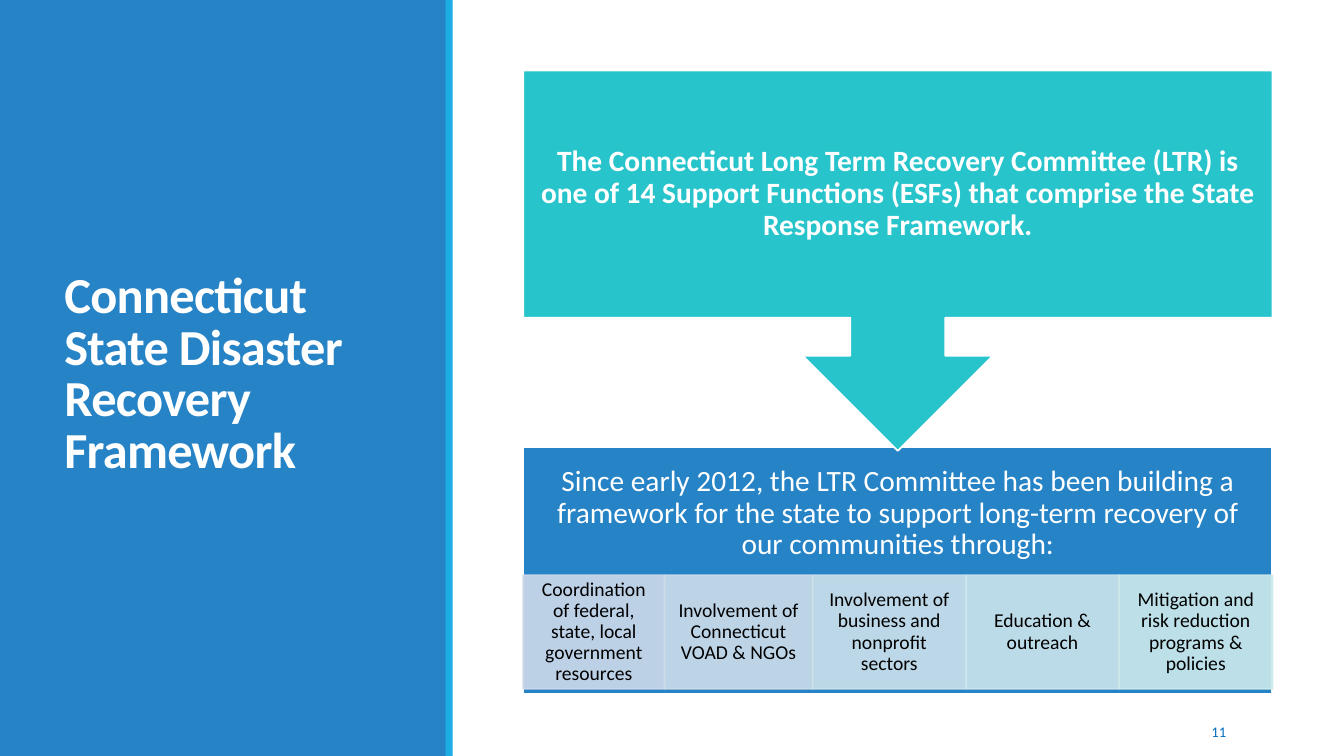
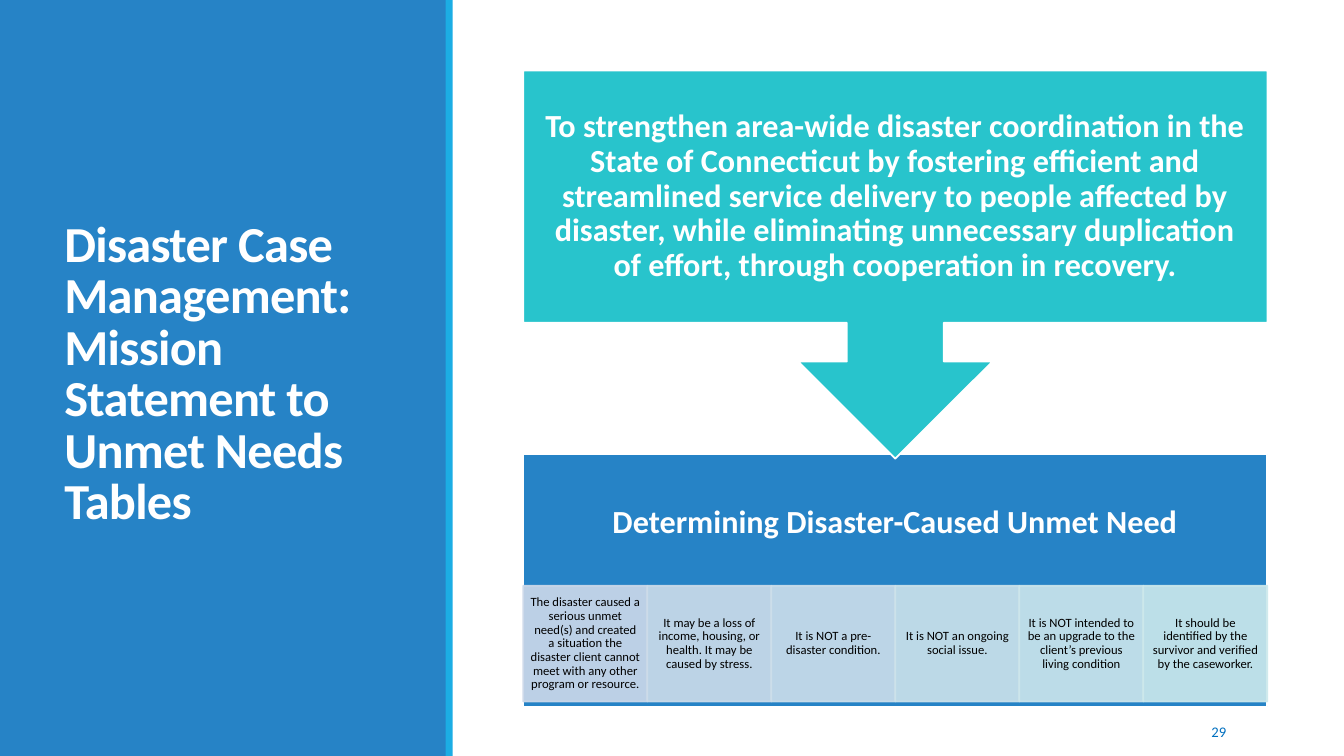
"""Build two recovery slides, each a callout that leads down to a panel of cells."""
from dataclasses import dataclass
from itertools import accumulate

from lxml import etree
from pptx import Presentation
from pptx import util as u
from pptx.dml.color import RGBColor
from pptx.enum import shapes, text
from pptx.oxml.ns import qn

FONT = "Calibri"
WHITE, BLACK = "FFFFFF", "000000"
BLUE, SKY, TEAL, NUMBER_BLUE = "2683C6", "1CADE4", "28C4CC", "0070C0"
CELL_FIRST, CELL_LAST = "CDD9EA", "CDE9EC"
CELL_OPACITY = 90
FLOW_LEFT, FLOW_TOP = 5.19, 0.7
CALLOUT_RATIO, HEADER_RATIO, CELL_TOP_RATIO, CELL_RATIO = 1.54, 0.54, 0.52, 0.46
OVERLAP = 0.04
LINE_SPACING = 0.9


@dataclass(frozen=True)
class Style:
    size: float
    colour: str = WHITE
    bold: bool = False
    align: text.PP_ALIGN = text.PP_ALIGN.CENTER
    spacing: float = LINE_SPACING
    tracking: float = 0


@dataclass(frozen=True)
class Flow:
    title: str
    number: int
    callout: str
    header: str
    header_bold: bool
    panel_height: float
    heading_size: float
    heading_inset: float
    cell_size: float
    cell_insets: tuple[float, float]
    cell_widths: tuple[float, ...]
    cells: tuple[str, ...]


FLOWS = (
    Flow(
        title="Connecticut State Disaster Recovery Framework",
        number=11,
        callout="The Connecticut Long Term Recovery Committee (LTR) is one of 14 Support "
                "Functions (ESFs) that comprise the State Response Framework.",
        header="Since early 2012, the LTR Committee has been building a framework for the "
               "state to support long-term recovery of our communities through:",
        header_bold=False,
        panel_height=2.45,
        heading_size=21,
        heading_inset=0.16,
        cell_size=14,
        cell_insets=(0.11, 0.02),
        cell_widths=(1.4, 1.47, 1.52, 1.52, 1.52),
        cells=(
            "Coordination of federal, state, local government resources",
            "Involvement of Connecticut VOAD & NGOs",
            "Involvement of business and nonprofit sectors",
            "Education & outreach",
            "Mitigation and risk reduction programs & policies",
        ),
    ),
    Flow(
        title="Disaster Case Management: Mission Statement to Unmet Needs Tables",
        number=29,
        callout="To strengthen area-wide disaster coordination in the State of Connecticut by "
                "fostering efficient and streamlined service delivery to people affected by "
                "disaster, while eliminating unnecessary duplication of effort, through "
                "cooperation in recovery.",
        header="Determining Disaster-Caused Unmet Need",
        header_bold=True,
        panel_height=2.5,
        heading_size=23,
        heading_inset=0.18,
        cell_size=9,
        cell_insets=(0.07, 0.01),
        cell_widths=(1.23,) * 6,
        cells=(
            "The disaster caused a serious unmet need(s) and created a situation the disaster "
            "client cannot meet with any other program or resource.",
            "It may be a loss of income, housing, or health. It may be caused by stress.",
            "It is NOT a pre-disaster condition.",
            "It is NOT an ongoing social issue.",
            "It is NOT intended to be an upgrade to the client’s previous living condition",
            "It should be identified by the survivor and verified by the caseworker.",
        ),
    ),
)


def rgb(colour: str) -> RGBColor:
    """Turn a hex string into a colour."""
    return RGBColor.from_string(colour)


def blend(first: str, last: str, share: float) -> str:
    """Return the colour that lies at a share of the way between two colours."""
    pairs = zip(rgb(first), rgb(last))
    return "".join(f"{round(a + (b - a) * share):02X}" for a, b in pairs)


def add_block(page, kind, left, top, width, height, fill, line=None):
    """Draw a filled shape, outlined if a line colour is given."""
    block = page.shapes.add_shape(kind, *map(u.Inches, (left, top, width, height)))
    block.shadow.inherit = False
    block.fill.solid()
    block.fill.fore_color.rgb = rgb(fill)
    if line:
        block.line.color.rgb = rgb(line)
        block.line.width = u.Pt(1.25)
    else:
        block.line.fill.background()
    return block


def set_opacity(block, percent: int) -> None:
    """Make the fill and line of a shape partly transparent."""
    for colour in list(block._element.spPr.iter(qn("a:srgbClr"))):
        etree.SubElement(colour, qn("a:alpha")).set("val", str(percent * 1000))


def write(box, words: str, style: Style, insets=(0.1, 0.05, 0.1, 0.05)) -> None:
    """Write one vertically centred paragraph, with insets left, top, right, bottom."""
    frame = box.text_frame
    frame.word_wrap = True
    frame.vertical_anchor = text.MSO_ANCHOR.MIDDLE
    (frame.margin_left, frame.margin_top,
     frame.margin_right, frame.margin_bottom) = map(u.Inches, insets)
    para = frame.paragraphs[0]
    para.alignment = style.align
    para.line_spacing = style.spacing
    para.font.name = FONT
    para.font.size = u.Pt(style.size)
    para.font.bold = style.bold
    para.font.color.rgb = rgb(style.colour)
    span = para.add_run()
    span.text = words
    if style.tracking:
        span._r.get_or_add_rPr().set("spc", str(round(style.tracking * 100)))


def add_text(page, left, top, width, height, words: str, style: Style) -> None:
    """Add a text box."""
    box = page.shapes.add_textbox(*map(u.Inches, (left, top, width, height)))
    write(box, words, style)


def add_frame(page, flow: Flow) -> None:
    """Draw the side band, title and page number."""
    rectangle = shapes.MSO_SHAPE.RECTANGLE
    add_block(page, rectangle, 0, 0, 4.43, 7.5, BLUE)
    add_block(page, rectangle, 4.42, 0, 0.07, 7.5, SKY)
    add_text(page, 0.54, 0.57, 3.37, 6.31, flow.title,
             Style(36, bold=True, align=text.PP_ALIGN.LEFT, spacing=0.85, tracking=-0.5))
    add_text(page, 10.83, 7.06, 1.43, 0.4, str(flow.number),
             Style(10.5, NUMBER_BLUE, align=text.PP_ALIGN.RIGHT, spacing=1.0))


def add_cells(page, flow: Flow, top: float) -> None:
    """Draw the row of tinted cells."""
    side, edge = flow.cell_insets
    lefts = accumulate(flow.cell_widths, initial=FLOW_LEFT)
    for index, (left, width, words) in enumerate(zip(lefts, flow.cell_widths, flow.cells)):
        tint = blend(CELL_FIRST, CELL_LAST, index / (len(flow.cells) - 1))
        cell = add_block(page, shapes.MSO_SHAPE.RECTANGLE, left, top, width,
                         flow.panel_height * CELL_RATIO, tint, tint)
        set_opacity(cell, CELL_OPACITY)
        write(cell, words, Style(flow.cell_size, BLACK), (side, edge, side, edge))


def add_flow(page, flow: Flow) -> None:
    """Draw the panel, its cells and the callout that points at it."""
    width, height, inset = sum(flow.cell_widths), flow.panel_height, flow.heading_inset
    callout_height = height * CALLOUT_RATIO
    panel_top = FLOW_TOP + callout_height - OVERLAP
    panel = add_block(page, shapes.MSO_SHAPE.RECTANGLE, FLOW_LEFT, panel_top,
                      width, height, BLUE, WHITE)
    below_header = height * (1 - HEADER_RATIO) + inset
    write(panel, flow.header, Style(flow.heading_size, bold=flow.header_bold),
          (inset, inset, inset, below_header))
    add_cells(page, flow, panel_top + height * CELL_TOP_RATIO)
    callout = add_block(page, shapes.MSO_SHAPE.DOWN_ARROW_CALLOUT, FLOW_LEFT, FLOW_TOP,
                        width, callout_height, TEAL, WHITE)
    write(callout, flow.callout, Style(flow.heading_size, bold=True), (inset,) * 4)


def main() -> None:
    """Build and save the deck."""
    deck = Presentation()
    deck.slide_width, deck.slide_height = u.Inches(13.33), u.Inches(7.5)
    for flow in FLOWS:
        page = deck.slides.add_slide(deck.slide_layouts[6])
        add_frame(page, flow)
        add_flow(page, flow)
    deck.save("out.pptx")


if __name__ == "__main__":
    main()
